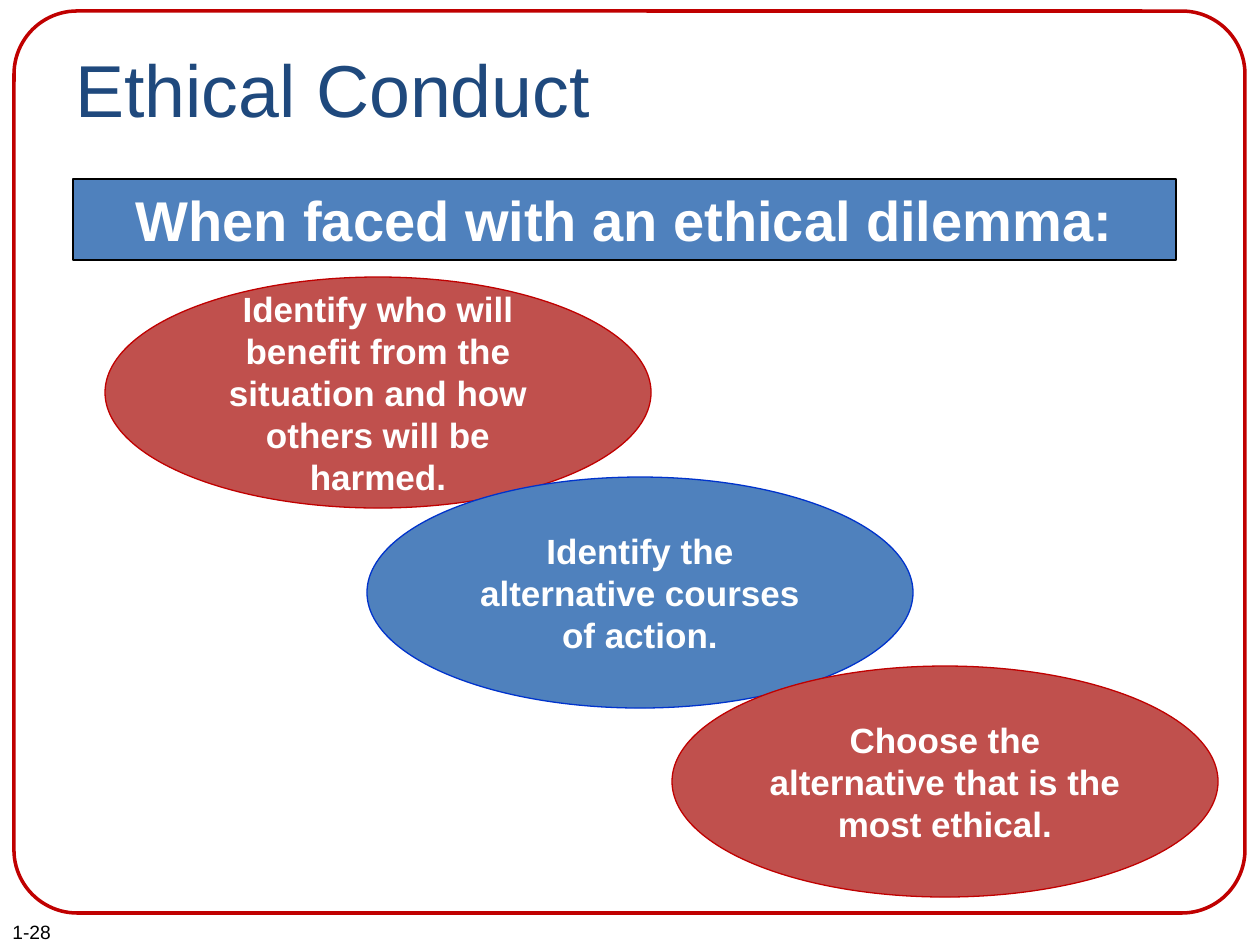
from pptx import Presentation
from pptx.dml.color import RGBColor
from pptx.enum.shapes import MSO_SHAPE as Shape
from pptx.enum.text import MSO_ANCHOR as Anchor, PP_ALIGN as Align
from pptx.util import Emu, Pt

EMU_PER_PX = 914400 / 126
BLACK = RGBColor(0x00, 0x00, 0x00)
WHITE = RGBColor(0xFF, 0xFF, 0xFF)
NAVY = RGBColor(0x1F, 0x49, 0x7D)
BLUE = RGBColor(0x4F, 0x81, 0xBD)
BLUE_EDGE = RGBColor(0x00, 0x33, 0xCC)
RED = RGBColor(0xC0, 0x50, 0x4D)
RED_EDGE = RGBColor(0xC0, 0x00, 0x00)


def px(length):
    return Emu(round(length * EMU_PER_PX))


class SlideBuilder:
    font = "Arial"

    def __init__(self, slide):
        self.slide = slide

    def add_words(self, holder, words, size, color, bold=False,
                  align=Align.LEFT, anchor=Anchor.TOP):
        frame = holder.text_frame
        frame.word_wrap = True
        frame.vertical_anchor = anchor
        paragraph = frame.paragraphs[0]
        paragraph.alignment = align
        run = paragraph.add_run()
        run.text = words
        run.font.name = self.font
        run.font.size = Pt(size)
        run.font.bold = bold
        run.font.color.rgb = color

    def label(self, box, words, size, color):
        holder = self.slide.shapes.add_textbox(*map(px, box))
        self.add_words(holder, words, size, color)

    def shape(self, kind, box, edge, weight=0.75, fill=None):
        figure = self.slide.shapes.add_shape(kind, *map(px, box))
        figure.shadow.inherit = False
        if fill is None:
            figure.fill.background()
        else:
            figure.fill.solid()
            figure.fill.fore_color.rgb = fill
        figure.line.color.rgb = edge
        figure.line.width = Pt(weight)
        return figure

    def border(self, box, edge, weight, rounding):
        outline = self.shape(Shape.ROUNDED_RECTANGLE, box, edge, weight)
        outline.adjustments[0] = rounding

    def panel(self, kind, box, words, size, fill, edge):
        figure = self.shape(kind, box, edge, fill=fill)
        self.add_words(figure, words, size, WHITE, True, Align.CENTER, Anchor.MIDDLE)


def main():
    deck = Presentation()
    deck.slide_width, deck.slide_height = px(1260), px(945)
    builder = SlideBuilder(deck.slides.add_slide(deck.slide_layouts[6]))

    builder.label((0, 914, 179, 36), "1-28", 11, BLACK)
    builder.border((14, 11, 1231, 902), RED_EDGE, 2, 0.07)
    builder.label((63, 38, 1134, 158), "Ethical Conduct", 42, NAVY)
    builder.panel(Shape.RECTANGLE, (73, 179, 1103, 81),
                  "When faced with an ethical dilemma:", 32, BLUE, BLACK)

    steps = [
        (105, 277, RED, RED_EDGE,
         "Identify who will benefit from the situation and how others will be harmed."),
        (367, 477, BLUE, BLUE_EDGE, "Identify the alternative courses of action."),
        (672, 666, RED, RED_EDGE, "Choose the alternative that is the most ethical."),
    ]
    for left, top, fill, edge, step in steps:
        builder.panel(Shape.OVAL, (left, top, 546, 231), step, 20, fill, edge)

    deck.save("out.pptx")


if __name__ == "__main__":
    main()
